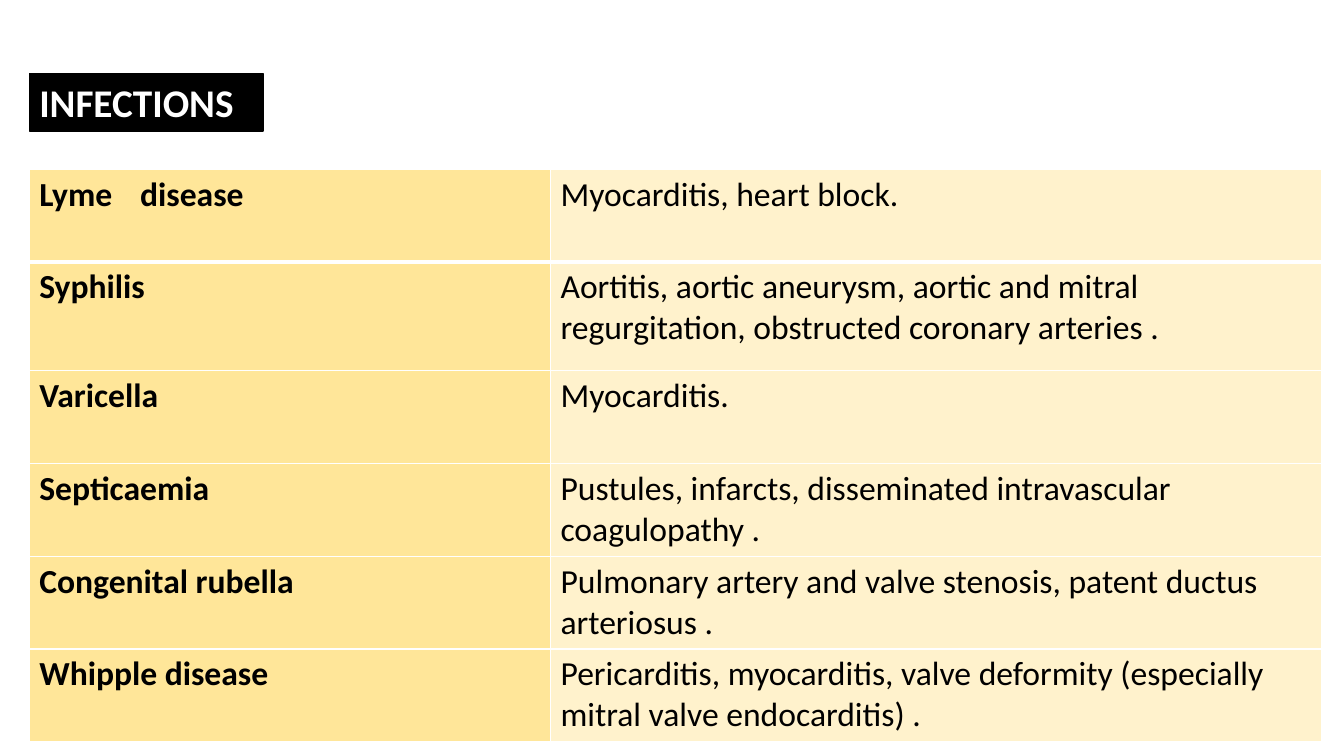
from lxml.etree import SubElement
from pptx import Presentation
from pptx.dml.color import RGBColor
from pptx.enum.text import MSO_ANCHOR, MSO_AUTO_SIZE, PP_ALIGN
from pptx.oxml.ns import qn
from pptx.util import Inches, Pt

TITLE = "INFECTIONS"
ROWS = [
    ("Lyme\tdisease", "Myocarditis, heart block."),
    ("Syphilis", "Aortitis, aortic aneurysm, aortic and mitral regurgitation, obstructed coronary arteries ."),
    ("Varicella", "Myocarditis."),
    ("Septicaemia", "Pustules, infarcts, disseminated intravascular coagulopathy ."),
    ("Congenital rubella", "Pulmonary artery and valve stenosis, patent ductus arteriosus ."),
    ("Whipple disease", "Pericarditis, myocarditis, valve deformity (especially mitral valve endocarditis) ."),
]
WIDTHS = [5.17, 7.65]
HEIGHTS = [0.92, 1.08, 0.92, 0.92, 0.92, 0.92]
LEFT, TOP = 0.29, 1.68
COLORS = {"black": "000000", "white": "FFFFFF", "gold": "FFE699", "cream": "FFF2CC"}
FILLS = ["gold", "cream"]


def color(name):
    return RGBColor.from_string(COLORS[name])


def style(para, size, name, bold):
    font = para.font
    font.name, font.size, font.bold = "Calibri", Pt(size), bold
    font.color.rgb = color(name)


def paint(shape, name):
    shape.fill.solid()
    shape.fill.fore_color.rgb = color(name)


def border(cell, widths):
    props = cell._tc.get_or_add_tcPr()
    for side, width in widths.items():
        line = SubElement(props, qn("a:ln" + side), w=str(Pt(width)))
        fill = SubElement(line, qn("a:solidFill"))
        SubElement(fill, qn("a:srgbClr"), val=COLORS["white"])


def add_title(slide):
    title = slide.shapes.title
    title.left, title.top = Inches(LEFT), Inches(0.73)
    title.width, title.height = Inches(2.32), Inches(0.57)
    paint(title, "black")
    title.line.color.rgb = color("black")
    title.line.width = Pt(1)
    frame = title.text_frame
    frame.text = TITLE
    frame.word_wrap = True
    frame.auto_size = MSO_AUTO_SIZE.NONE
    frame.vertical_anchor = MSO_ANCHOR.MIDDLE
    para = frame.paragraphs[0]
    para.alignment = PP_ALIGN.LEFT
    style(para, 28, "white", True)


def add_grid(slide):
    table = slide.shapes.add_table(
        len(ROWS), len(WIDTHS), Inches(LEFT), Inches(TOP),
        Inches(sum(WIDTHS)), Inches(sum(HEIGHTS))).table
    table.first_row = table.horz_banding = False
    for col, width in zip(table.columns, WIDTHS):
        col.width = Inches(width)
    for row, height in zip(table.rows, HEIGHTS):
        row.height = Inches(height)
    for i, texts in enumerate(ROWS):
        for j, text in enumerate(texts):
            cell = table.cell(i, j)
            border(cell, {"L": 1, "R": 1, "T": 3 if i == 1 else 1, "B": 3 if i == 0 else 1})
            paint(cell, FILLS[j])
            cell.text = text
            style(cell.text_frame.paragraphs[0], 24, "black", j == 0)


def main():
    deck = Presentation()
    deck.slide_width, deck.slide_height = Inches(13.33), Inches(7.5)
    slide = deck.slides.add_slide(deck.slide_layouts[5])
    add_title(slide)
    add_grid(slide)
    deck.save("out.pptx")


if __name__ == "__main__":
    main()
